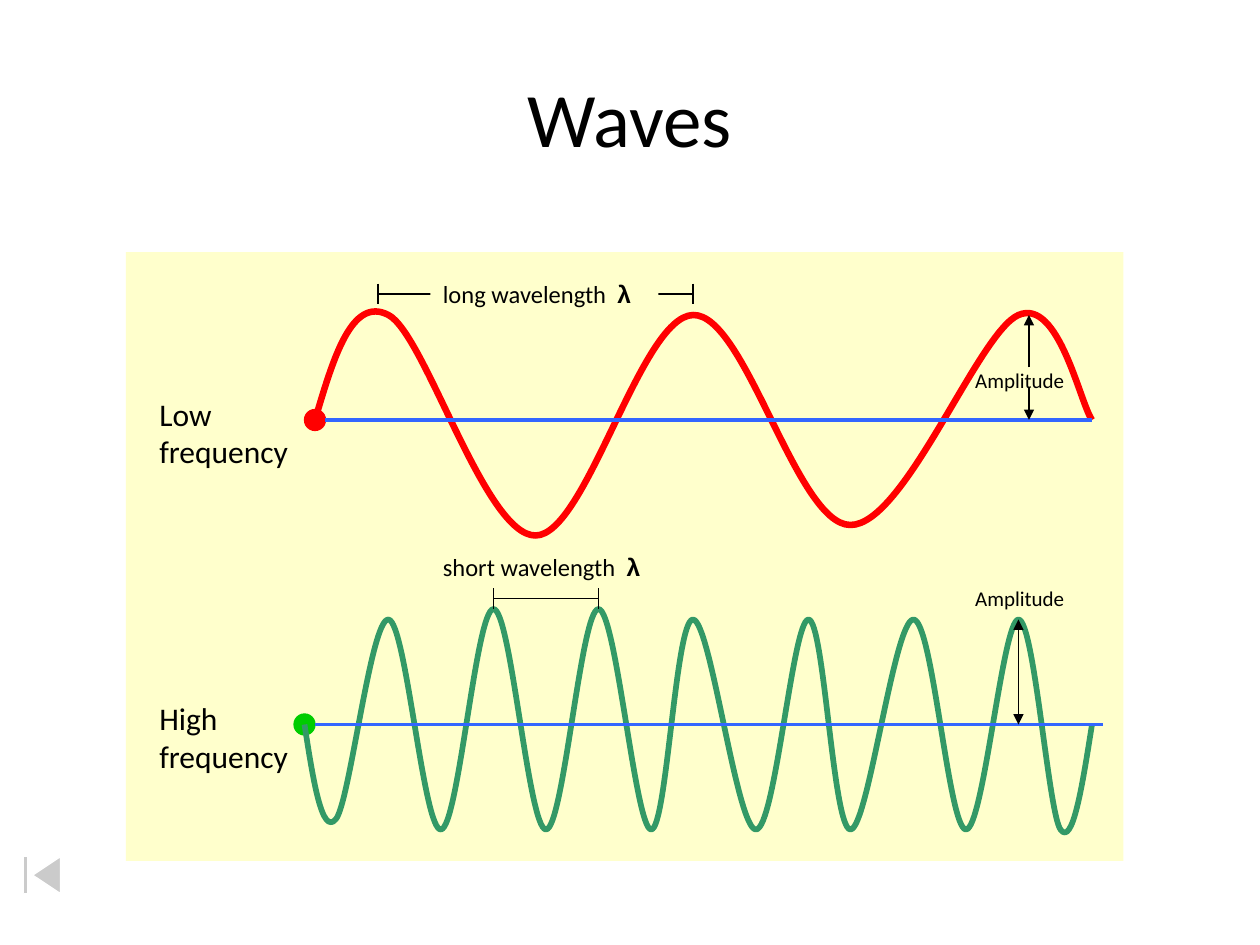
from lxml import etree
from pptx import Presentation
from pptx import util as u
from pptx.dml.color import RGBColor
from pptx.enum import shapes, text
from pptx.oxml import ns

# All places are (column, row) on a grid of twelve cells to the inch.
CELL = u.Inches(1) // 12
COLORS = {"panel": "FFFFCC", "low": "FF0000", "ball": "00CC00", "high": "339966",
          "axis": "3366FF", "ink": "000000", "button": "FFFFFF"}

TITLE = ("Waves", (6, 3.6, 108, 15))
PANEL = (12, 24, 95, 58)
BALLS = [((29, 39, 2, 2), "low"), ((28, 68, 2, 2), "ball")]
LOW_WAVE = [(30, 40), (37, 30), (51, 51), (66, 30), (81, 50), (97, 30), (104, 40)]
HIGH_WAVE = [(29, 69), (32, 78), (37, 59), (42, 79), (47, 58), (52, 79), (57, 58), (62, 79),
             (66, 59), (72, 79), (77, 59), (81, 79), (87, 59), (92, 79), (97, 59),
             (101, 79), (104, 69)]
# points, colour, width, whether the last stretch is steered toward the end point
WAVES = [(LOW_WAVE, "low", 3.75, False), (HIGH_WAVE, "high", 3.25, True)]
AXES = [((31, 40), (104, 40)), ((30, 69), (105, 69))]
AMPLITUDE_ARROWS = [((97, 69), (97, 59), ("head", "tail")),
                    ((98, 35), (98, 30), ("tail",)),
                    ((98, 40), (98, 37), ("head",))]
LABELS = [(["Low", "frequency"], (14, 37, 15.6, 8.4), 18),
          (["High", "frequency"], (14, 66, 15.6, 8.4), 18),
          (["Amplitude"], (91.7, 55.2, 11.3, 3.6), 12),
          (["Amplitude"], (91.7, 34.4, 11.3, 3.6), 12)]
# left, right and top of the ruler; then its caption
WAVELENGTHS = [(36, 66, 27, "long wavelength  ", (41, 26, 21.7, 4)),
               (47, 57, 56, "short wavelength  ", (41, 52, 22.6, 4))]
BUTTON = (0, 81, 8, 4.7)


def color(name):
    return RGBColor.from_string(COLORS[name])


def cells(values):
    return [round(value * CELL) for value in values]


def set_line(line, name, width):
    line.color.rgb = color(name)
    line.width = u.Pt(width)


def add_solid(slide, kind, box, fill, outline=None):
    shape = slide.shapes.add_shape(kind, *cells(box))
    shape.shadow.inherit = False
    shape.fill.solid()
    shape.fill.fore_color.rgb = color(fill)
    if outline:
        set_line(shape.line, outline, 0.75)
    else:
        shape.line.fill.background()
    return shape


def add_line(slide, start, end, name="ink", width=0.75, arrows=()):
    line = slide.shapes.add_connector(shapes.MSO_CONNECTOR.STRAIGHT, *cells(start + end))
    set_line(line.line, name, width)
    properties = line._element.spPr
    for side in arrows:
        etree.SubElement(properties.find(ns.qn("a:ln")), ns.qn(f"a:{side}End"), type="triangle")
    etree.SubElement(properties, ns.qn("a:effectLst"))


def write(paragraph, words, **font):
    run = paragraph.add_run()
    run.text = words
    run.font.color.rgb = color("ink")
    for key, value in font.items():
        setattr(run.font, key, value)


def fit_frame(shape):
    frame = shape.text_frame
    settings = {"word_wrap": False, "auto_size": text.MSO_AUTO_SIZE.SHAPE_TO_FIT_TEXT,
                "vertical_anchor": text.MSO_ANCHOR.TOP}
    for key, value in settings.items():
        setattr(frame, key, value)
    return frame


def shift(point, step, sign=1):
    return tuple(p + sign * s for p, s in zip(point, step))


def middle(first, second):
    return tuple((a + b) / 2 for a, b in zip(first, second))


def spline(points, steer_end):
    """Return (control, control, point) for each stretch of a curve through the points."""
    padded = [points[0], *points, points[-1]]
    steps = [tuple((b - a) / 6 for a, b in zip(before, after))
             for before, after in zip(padded, padded[2:])]
    curves = [[shift(points[i], steps[i]), shift(points[i + 1], steps[i + 1], -1), points[i + 1]]
              for i in range(len(points) - 1)]
    curves[0][0] = middle(points[0], curves[0][1])
    if steer_end:
        curves[-1][1] = middle(curves[-1][0], points[-1])
    return curves


def add_wave(slide, points, name, width, steer_end):
    builder = slide.shapes.build_freeform(*cells(points[0]))
    builder.add_line_segments([cells(point) for point in points[1:]], close=False)
    wave = builder.convert_to_shape()
    wave.shadow.inherit = False
    wave.fill.background()
    set_line(wave.line, name, width)
    corner = [min(values) for values in zip(*points)]
    straights = list(wave._element.iter(ns.qn("a:lnTo")))
    for straight, curve in zip(straights, spline(points, steer_end)):
        bezier = etree.Element(ns.qn("a:cubicBezTo"))
        for point in curve:
            x, y = cells(shift(point, corner, -1))
            etree.SubElement(bezier, ns.qn("a:pt"), x=str(x), y=str(y))
        straight.getparent().replace(straight, bezier)


def add_label(slide, lines, box, size):
    frame = fit_frame(slide.shapes.add_textbox(*cells(box)))
    for index, words in enumerate(lines):
        paragraph = frame.add_paragraph() if index else frame.paragraphs[0]
        write(paragraph, words, size=u.Pt(size), name="Calibri")


def add_wavelength(slide, left, right, top, words, box):
    for column in (left, right):
        add_line(slide, (column, top), (column, top + 2))
    add_line(slide, (left, top + 1), (right, top + 1))
    caption = add_solid(slide, shapes.MSO_SHAPE.RECTANGLE, box, "panel")
    paragraph = fit_frame(caption).paragraphs[0]
    paragraph.alignment = text.PP_ALIGN.LEFT
    write(paragraph, words, size=u.Pt(14), name="Calibri")
    write(paragraph, "λ", size=u.Pt(14), name="Arial", bold=True)


def main():
    presentation = Presentation()
    presentation.slide_width, presentation.slide_height = u.Inches(10), u.Inches(7.5)
    slide = presentation.slides.add_slide(presentation.slide_layouts[5])

    title = slide.shapes.title
    title.left, title.top, title.width, title.height = cells(TITLE[1])
    title.text_frame.vertical_anchor = text.MSO_ANCHOR.MIDDLE
    paragraph = title.text_frame.paragraphs[0]
    paragraph.alignment = text.PP_ALIGN.CENTER
    write(paragraph, TITLE[0], size=u.Pt(44), name="Calibri")

    add_solid(slide, shapes.MSO_SHAPE.RECTANGLE, PANEL, "panel")
    for box, name in BALLS:
        add_solid(slide, shapes.MSO_SHAPE.OVAL, box, name, name)
    for wave in WAVES:
        add_wave(slide, *wave)
    for start, end in AXES:
        add_line(slide, start, end, "axis", 2)
    for start, end, arrows in AMPLITUDE_ARROWS:
        add_line(slide, start, end, arrows=arrows)
    for label in LABELS:
        add_label(slide, *label)
    for wavelength in WAVELENGTHS:
        add_wavelength(slide, *wavelength)

    button = add_solid(slide, shapes.MSO_SHAPE.ACTION_BUTTON_BEGINNING, BUTTON, "button", "button")
    fill = button._element.spPr.find(ns.qn("a:solidFill"))
    etree.SubElement(fill[0], ns.qn("a:alpha"), val="50000")

    presentation.save("out.pptx")


if __name__ == "__main__":
    main()
